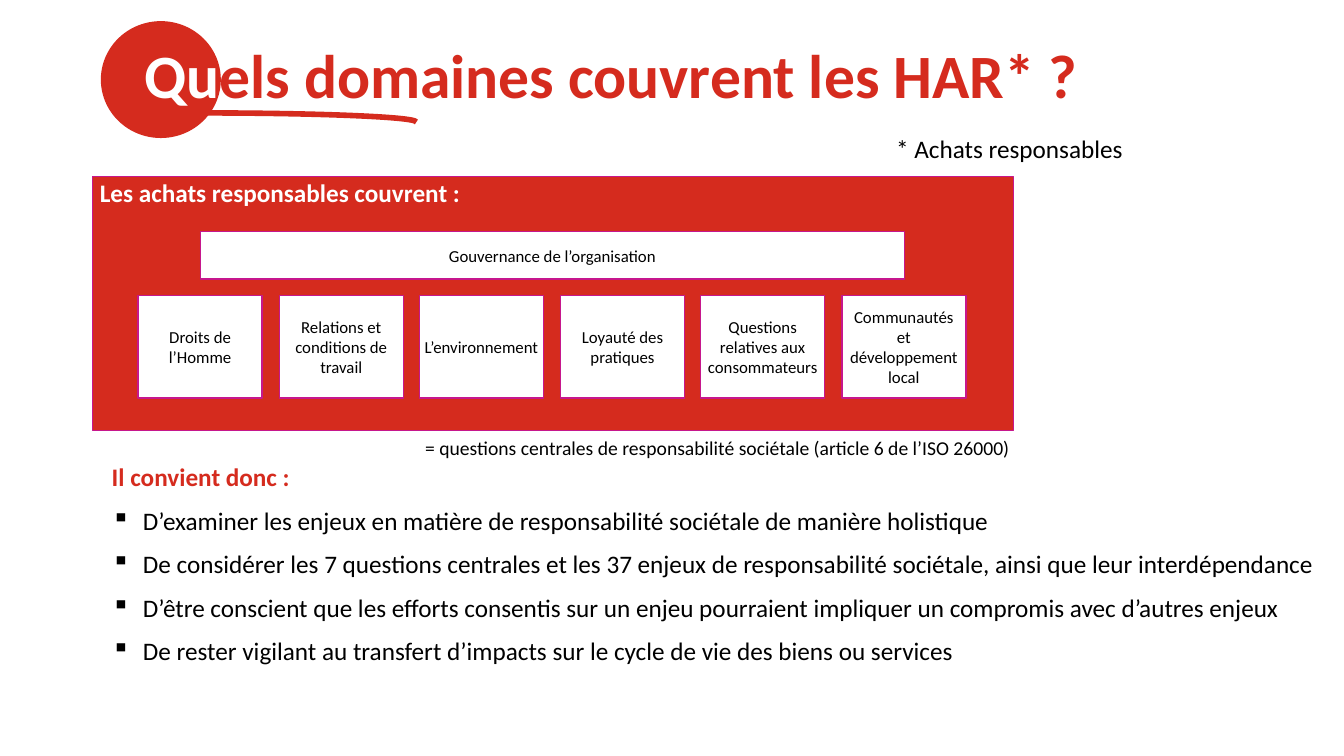
from lxml import etree
from pptx import Presentation
from pptx.dml.color import RGBColor
from pptx.enum.shapes import MSO_SHAPE
from pptx.enum.text import MSO_ANCHOR, MSO_AUTO_SIZE, PP_ALIGN
from pptx.oxml.ns import qn
from pptx.util import Pt

RECT, OVAL, ARC = MSO_SHAPE.RECTANGLE, MSO_SHAPE.OVAL, MSO_SHAPE.ARC
LEFT, MID, RIGHT = PP_ALIGN.LEFT, PP_ALIGN.CENTER, PP_ALIGN.RIGHT
TOP, CENTRE = MSO_ANCHOR.TOP, MSO_ANCHOR.MIDDLE
FIXED, GROW = MSO_AUTO_SIZE.NONE, MSO_AUTO_SIZE.SHAPE_TO_FIT_TEXT

SCALE = 9144  # EMU per px, 100 px to the inch
COLOURS = {"red": "D52B1E", "pink": "C6178D", "white": "FFFFFF", "black": "000000"}


def px(n):
    return n * SCALE


def rgb(name):
    return RGBColor.from_string(COLOURS[name])


class Page:
    font = "Calibri"

    def __init__(self, deck):
        self.slide = deck.slides.add_slide(deck.slide_layouts[5])
        self.shapes = self.slide.shapes

    def style(self, run, size, colour, bold=False):
        run.font.name = self.font
        run.font.size = Pt(size)
        run.font.bold = bold
        run.font.color.rgb = rgb(colour)

    def inset(self, frame, side, edge):
        frame.margin_left = frame.margin_right = px(side)
        frame.margin_top = frame.margin_bottom = px(edge)

    def shape(self, kind, box, fill=None, line=None, width=1):
        item = self.shapes.add_shape(kind, *map(px, box))
        item.shadow.inherit = False
        if fill:
            item.fill.solid()
            item.fill.fore_color.rgb = rgb(fill)
        else:
            item.fill.background()
        if line:
            item.line.color.rgb = rgb(line)
            item.line.width = Pt(width)
        else:
            item.line.fill.background()
        return item

    def card(self, box, words):
        frame = self.shape(RECT, box, "white", "pink").text_frame
        self.inset(frame, 4, 4)
        frame.word_wrap = True
        frame.vertical_anchor = CENTRE
        frame.text = words
        para = frame.paragraphs[0]
        para.alignment = MID
        self.style(para.runs[0], 12, "black")

    def text(self, box, words, size, colour="black", bold=False, align=LEFT, inset=(10, 5)):
        frame = self.shapes.add_textbox(*map(px, box)).text_frame
        frame.word_wrap = True
        frame.auto_size = GROW
        self.inset(frame, *inset)
        frame.text = words
        para = frame.paragraphs[0]
        para.alignment = align
        self.style(para.runs[0], size, colour, bold)
        return frame

    def points(self, box, head, items):
        frame = self.text(box, head, 18, "red", True)
        for item in items:
            para = frame.add_paragraph()
            para.text = item
            props = para._p.get_or_add_pPr()
            props.set("marL", str(px(31)))
            props.set("indent", str(px(-31)))
            etree.SubElement(props, qn("a:buChar")).set("char", "▪")
            self.style(para.runs[0], 18, "black")
        for para in frame.paragraphs:
            para.line_spacing = 1.07
            para.space_after = Pt(8)

    def title(self, box, parts):
        item = self.shapes.title
        item.left, item.top, item.width, item.height = map(px, box)
        frame = item.text_frame
        frame.auto_size = FIXED
        frame.word_wrap = True
        frame.vertical_anchor = TOP
        self.inset(frame, 10, 5)
        para = frame.paragraphs[0]
        para.alignment = LEFT
        para.line_spacing = 0.9
        for words, colour in parts:
            run = para.add_run()
            run.text = words
            self.style(run, 44, colour, True)
        # Bring the title in front of the disc
        self.shapes._spTree.append(item._element)


def main():
    deck = Presentation()
    deck.slide_width, deck.slide_height = px(1333), px(750)
    page = Page(deck)

    # Red panel with the seven core subjects
    page.shape(RECT, (92, 175, 913, 252), "red", "pink")
    subjects = [
        "Droits de l’Homme",
        "Relations et conditions de travail",
        "L’environnement",
        "Loyauté des pratiques",
        "Questions relatives aux consommateurs",
        "Communautés et développement local",
    ]
    for i, words in enumerate(subjects):
        page.card((137 + round(i * 139.6), 293, 123, 102), words)
    page.card((199, 230, 698, 47), "Gouvernance de l’organisation")
    page.text((95, 176, 535, 30), "Les achats responsables couvrent :", 18, "white", True,
              inset=(4, 0))
    page.text((351, 432, 655, 24),
              "= questions centrales de responsabilité sociétale (article 6 de l’ISO 26000)",
              14, align=RIGHT, inset=(4, 0))

    # Advice
    page.points((101, 451, 1252, 217), "Il convient donc :", [
        "D’examiner les enjeux en matière de responsabilité sociétale de manière holistique",
        "De considérer les 7 questions centrales et les 37 enjeux de responsabilité sociétale, "
        "ainsi que leur interdépendance",
        "D’être conscient que les efforts consentis sur un enjeu pourraient impliquer "
        "un compromis avec d’autres enjeux",
        "De rester vigilant au transfert d’impacts sur le cycle de vie des biens ou services",
    ])

    # Title with its disc, underline and footnote
    page.shape(OVAL, (100, 21, 119, 116), "red")
    page.title((133, 40, 1200, 145),
               [("Qu", "white"), ("els domaines couvrent les HAR* ?", "red")])
    page.shape(ARC, (-15, 112, 428, 18), line="red", width=4)
    page.text((879, 127, 284, 40), "* Achats responsables", 18)

    deck.save("out.pptx")


if __name__ == "__main__":
    main()
